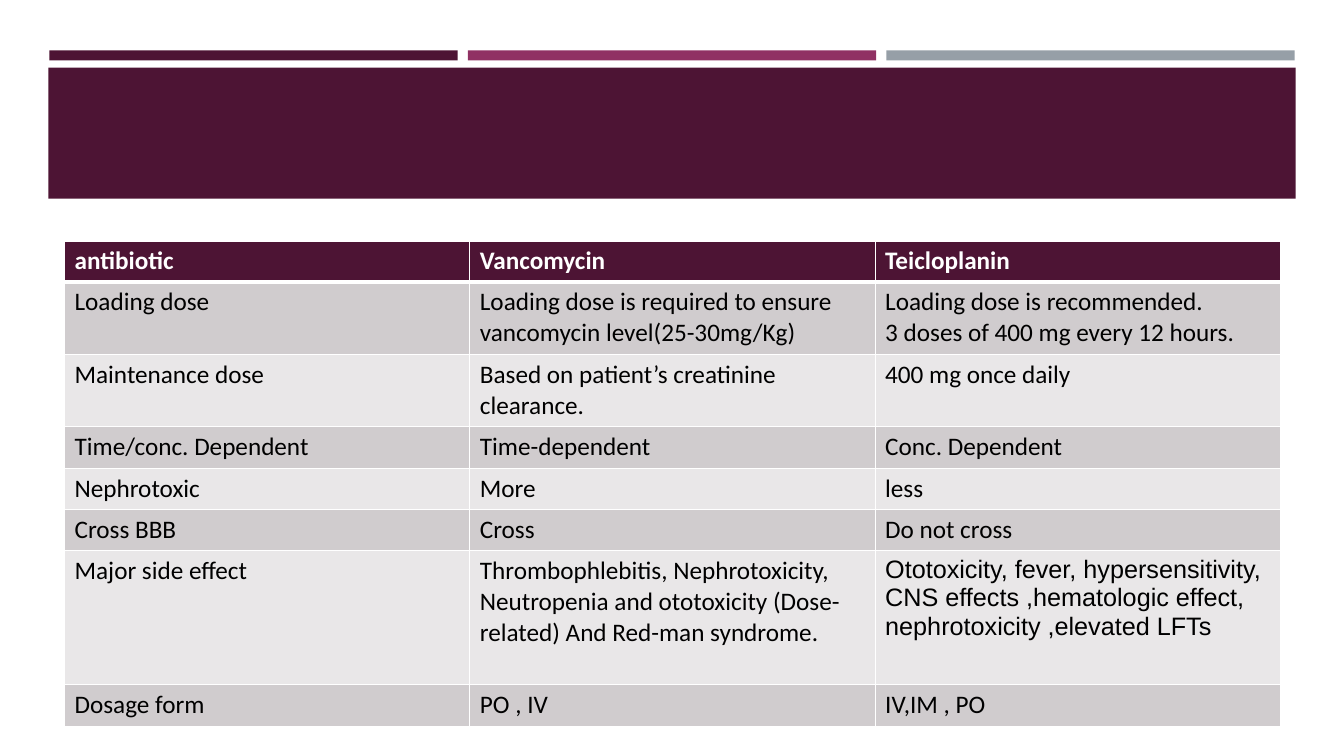
from lxml.etree import SubElement
from pptx import Presentation
from pptx.dml.color import RGBColor
from pptx.enum.shapes import MSO_SHAPE
from pptx.oxml import parse_xml
from pptx.oxml.ns import nsdecls
from pptx.util import Inches, Pt

PLUM = RGBColor(0x4D, 0x14, 0x34)
MAGENTA = RGBColor(0x90, 0x31, 0x63)
GREY = RGBColor(0x96, 0x9F, 0xA7)
DARK_BAND = RGBColor(0xD0, 0xCC, 0xCE)
LIGHT_BAND = RGBColor(0xE9, 0xE7, 0xE8)
WHITE = RGBColor(0xFF, 0xFF, 0xFF)
BLACK = RGBColor(0, 0, 0)

COLUMN_WIDTH = 4.02
SINGLE, DOUBLE, TALL = 0.41, 0.72, 1.33

# Row height in inches, then the text of each column
COMPARISON = [
    (0.4, "antibiotic", "Vancomycin", "Teicloplanin"),
    (DOUBLE, "Loading dose",
     "Loading dose is required to ensure vancomycin level(25-30mg/Kg)",
     "Loading dose is recommended.\n3 doses of 400 mg every 12 hours."),
    (DOUBLE, "Maintenance dose", "Based on patient’s creatinine clearance.",
     "400 mg once daily"),
    (SINGLE, "Time/conc. Dependent", "Time-dependent", "Conc. Dependent"),
    (SINGLE, "Nephrotoxic", "More", "less"),
    (SINGLE, "Cross BBB", "Cross", "Do not cross"),
    (TALL, "Major side effect",
     "Thrombophlebitis, Nephrotoxicity, Neutropenia and ototoxicity "
     "(Dose-related) And Red-man syndrome.",
     "Ototoxicity, fever, hypersensitivity, CNS effects ,hematologic effect, "
     "nephrotoxicity ,elevated LFTs"),
    (SINGLE, "Dosage form", "PO , IV", "IV,IM , PO"),
]
ARIAL_CELL = (6, 2)


def add_bar(slide, left, top, width, height, color):
    bar = slide.shapes.add_shape(MSO_SHAPE.RECTANGLE, Inches(left), Inches(top),
                                 Inches(width), Inches(height))
    bar.shadow.inherit = False
    bar.fill.solid()
    bar.fill.fore_color.rgb = color
    bar.line.fill.background()


def set_borders(cell, bottom_width):
    """Draw white cell edges; they must come before the fill in the cell XML."""
    properties = cell._tc.get_or_add_tcPr()
    edges = {"lnL": 1, "lnR": 1, "lnT": 1, "lnB": bottom_width}
    for position, (edge, width) in enumerate(edges.items()):
        border = parse_xml(f'<a:{edge} {nsdecls("a")} w="{Pt(width)}"/>')
        namespace = border.nsmap["a"]
        fill = SubElement(border, f"{{{namespace}}}solidFill")
        SubElement(fill, f"{{{namespace}}}srgbClr", val=str(WHITE))
        properties.insert(position, border)


def fill_cell(cell, text, fill, color, bold, font_name, bottom_width):
    cell.fill.solid()
    cell.fill.fore_color.rgb = fill
    set_borders(cell, bottom_width)
    cell.text_frame.text = text
    for paragraph in cell.text_frame.paragraphs:
        for run in paragraph.runs:
            run.font.name = font_name
            run.font.size = Pt(18)
            run.font.bold = bold
            run.font.color.rgb = color


def add_comparison(slide):
    column_count = len(COMPARISON[0]) - 1
    total_height = sum(row[0] for row in COMPARISON)
    table = slide.shapes.add_table(
        len(COMPARISON), column_count, Inches(0.64), Inches(2.39),
        Inches(COLUMN_WIDTH * column_count), Inches(total_height)).table
    for column in table.columns:
        column.width = Inches(COLUMN_WIDTH)
    for row_index, (height, *texts) in enumerate(COMPARISON):
        table.rows[row_index].height = Inches(height)
        header = row_index == 0
        band = DARK_BAND if row_index % 2 else LIGHT_BAND
        for column_index, text in enumerate(texts):
            is_arial = (row_index, column_index) == ARIAL_CELL
            fill_cell(table.cell(row_index, column_index), text,
                      fill=PLUM if header else band,
                      color=WHITE if header else BLACK,
                      bold=header,
                      font_name="Arial" if is_arial else "Calibri",
                      bottom_width=3 if header else 1)


def main():
    presentation = Presentation()
    presentation.slide_width = Inches(13.33)
    presentation.slide_height = Inches(7.5)
    slide = presentation.slides.add_slide(presentation.slide_layouts[6])

    for index, color in enumerate((PLUM, MAGENTA, GREY)):
        add_bar(slide, 0.49 + 4.15 * index, 0.5, 4.05, 0.1, color)
    add_bar(slide, 0.48, 0.67, 12.37, 1.3, PLUM)
    add_comparison(slide)

    presentation.save("out.pptx")


if __name__ == "__main__":
    main()
